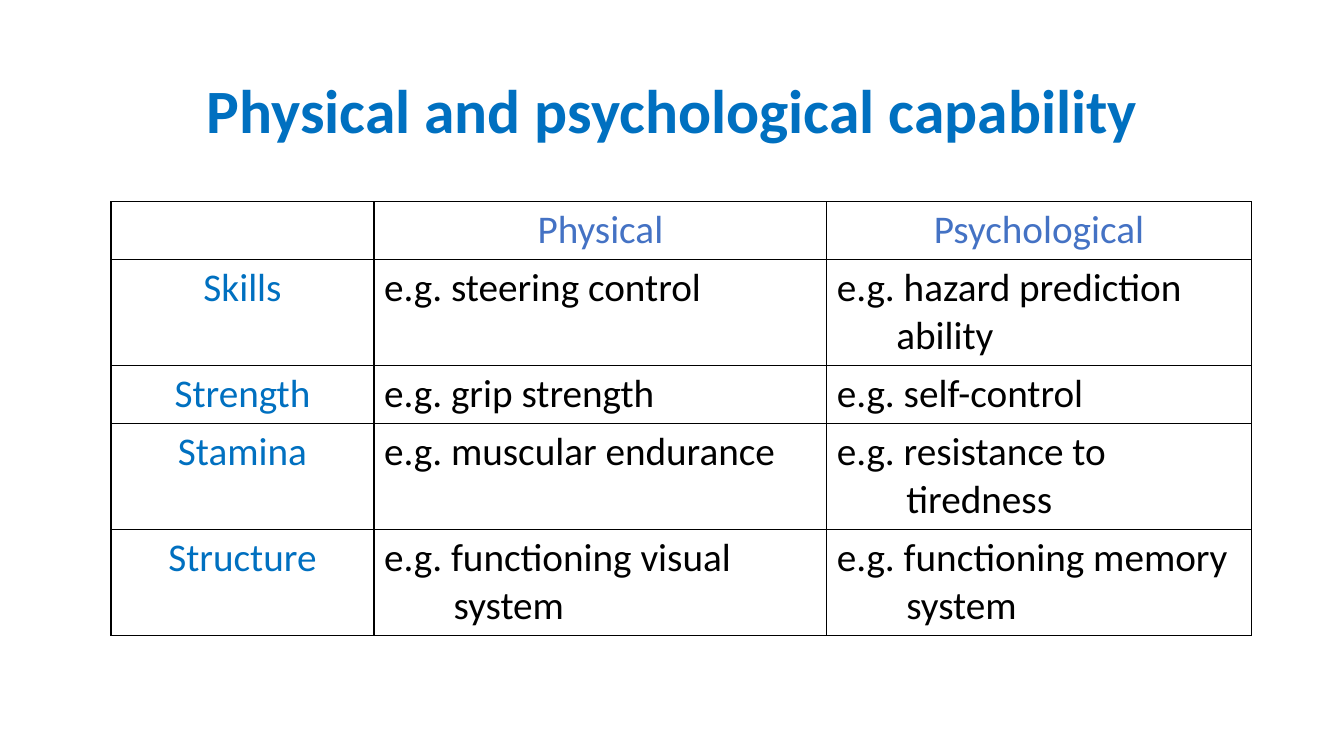
from dataclasses import dataclass

from lxml.etree import SubElement
from pptx import Presentation
from pptx.dml.color import RGBColor
from pptx.enum.text import MSO_ANCHOR, MSO_AUTO_SIZE, PP_ALIGN
from pptx.oxml.ns import qn
from pptx.slide import Slide
from pptx.table import _Cell
from pptx.text.text import TextFrame
from pptx.util import Pt

EMU_PER_PX = 9144
FONT = "Calibri"
COLORS = {
    "heading": "0070C0",
    "column": "4472C4",
    "text": "000000",
    "border": "000000",
    "paper": "FFFFFF",
}
COLUMN_WIDTHS = (261, 449, 421)
HEADERS = ("Physical", "Psychological")


@dataclass(frozen=True)
class Example:
    text: str
    indent: int = 0


@dataclass(frozen=True)
class Capability:
    name: str
    physical: Example
    psychological: Example
    height: int


CAPABILITIES = (
    Capability("Skills", Example("e.g. steering control"),
               Example("e.g. hazard prediction ability", 59), 105),
    Capability("Strength", Example("e.g. grip strength"),
               Example("e.g. self-control"), 57),
    Capability("Stamina", Example("e.g. muscular endurance"),
               Example("e.g. resistance to tiredness", 69), 105),
    Capability("Structure", Example("e.g. functioning visual system", 69),
               Example("e.g. functioning memory system", 69), 105),
)
HEADER_HEIGHT = 57


def px(length: int) -> int:
    return length * EMU_PER_PX


def write_text(frame: TextFrame, text: str, *, color: str, size: int = 28,
               bold: bool = False, align: PP_ALIGN = PP_ALIGN.CENTER,
               spacing: float = 1.0, indent: int = 0) -> None:
    para = frame.paragraphs[0]
    para.alignment = align
    para.line_spacing = spacing
    if indent:
        properties = para._p.get_or_add_pPr()
        properties.set("marL", str(px(indent)))
        properties.set("indent", str(-px(indent)))
    span = para.add_run()
    span.text = text
    span.font.name = FONT
    span.font.size = Pt(size)
    span.font.bold = bold
    span.font.color.rgb = RGBColor.from_string(COLORS[color])


def style_cell(cell: _Cell) -> None:
    cell.fill.solid()
    cell.fill.fore_color.rgb = RGBColor.from_string(COLORS["paper"])
    properties = cell._tc.get_or_add_tcPr()
    for position, side in enumerate(("lnL", "lnR", "lnT", "lnB")):
        border = SubElement(properties, qn(f"a:{side}"), w=str(Pt(1)))
        fill = SubElement(border, qn("a:solidFill"))
        SubElement(fill, qn("a:srgbClr"), val=COLORS["border"])
        properties.insert(position, border)


def add_title(page: Slide) -> None:
    title = page.shapes.title
    title.left, title.top, title.width, title.height = map(px, (92, 40, 1150, 145))
    frame = title.text_frame
    frame.word_wrap = True
    frame.auto_size = MSO_AUTO_SIZE.NONE
    frame.vertical_anchor = MSO_ANCHOR.MIDDLE
    write_text(frame, "Physical and psychological capability",
               color="heading", size=44, bold=True, spacing=0.9)


def add_capability_table(page: Slide) -> None:
    heights = (HEADER_HEIGHT, *(item.height for item in CAPABILITIES))
    table = page.shapes.add_table(
        len(heights), len(COLUMN_WIDTHS), px(110), px(200),
        px(sum(COLUMN_WIDTHS)), px(sum(heights))).table
    table.first_row = False
    table.horz_banding = False
    for column, width in zip(table.columns, COLUMN_WIDTHS):
        column.width = px(width)
    for row, height in zip(table.rows, heights):
        row.height = px(height)
    for cell in table.iter_cells():
        style_cell(cell)
    for column_index, header in enumerate(HEADERS, start=1):
        write_text(table.cell(0, column_index).text_frame, header, color="column")
    for row_index, item in enumerate(CAPABILITIES, start=1):
        write_text(table.cell(row_index, 0).text_frame, item.name, color="heading")
        for column_index, example in enumerate((item.physical, item.psychological), start=1):
            write_text(table.cell(row_index, column_index).text_frame, example.text,
                       color="text", align=PP_ALIGN.LEFT, indent=example.indent)


def main() -> None:
    deck = Presentation()
    deck.slide_width = px(1333)
    deck.slide_height = px(750)
    page = deck.slides.add_slide(deck.slide_layouts.get_by_name("Title Only"))
    add_title(page)
    add_capability_table(page)
    deck.save("out.pptx")


if __name__ == "__main__":
    main()
